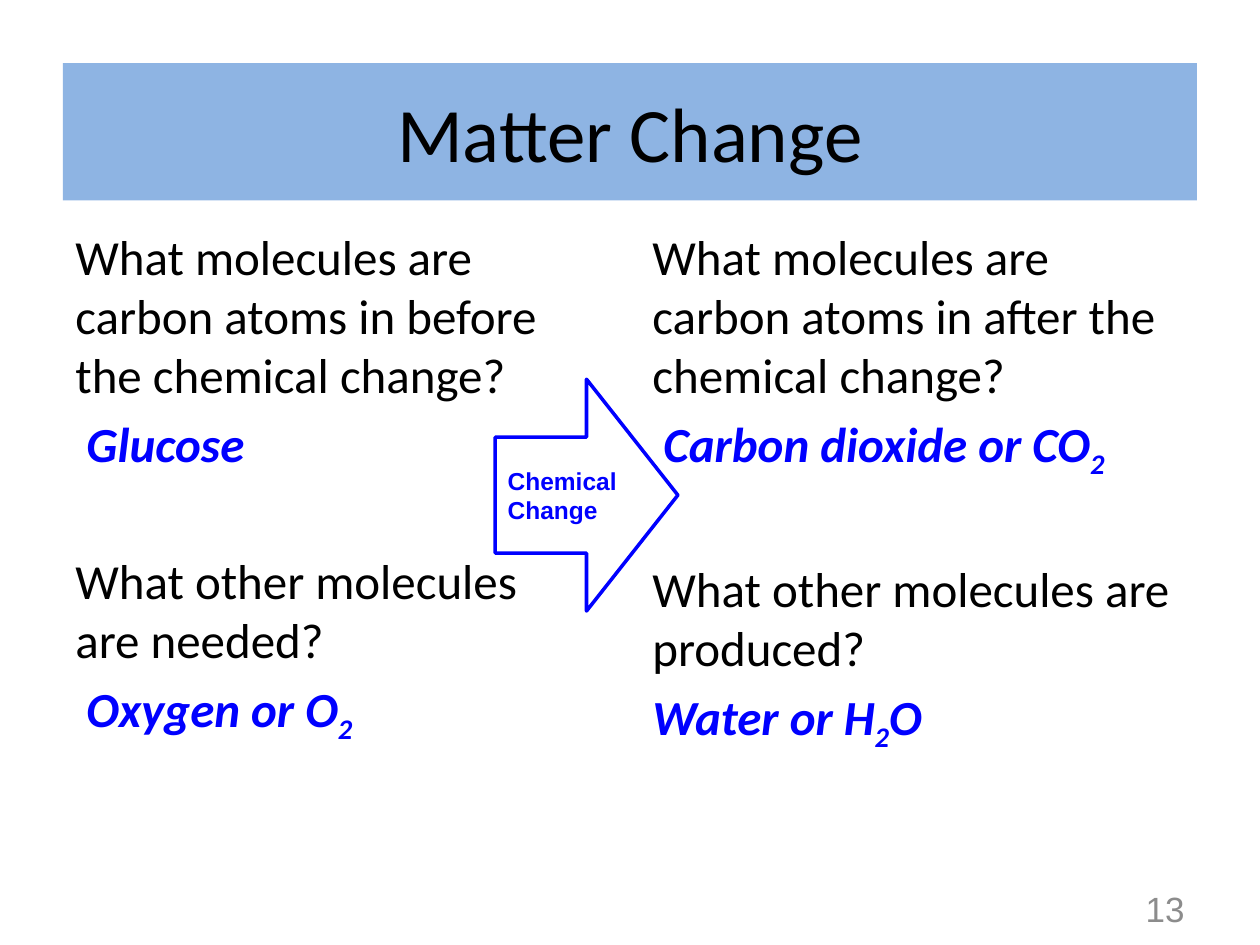
import pptx
import pptx.dml.color
import pptx.enum.shapes
import pptx.enum.text
import pptx.util
from pptx.util import Inches

ALIGN = pptx.enum.text.PP_ALIGN
ANCHOR = pptx.enum.text.MSO_ANCHOR
SHAPE = pptx.enum.shapes.MSO_SHAPE
BLACK, BLUE, GREY = "000000", "0000FF", "8C8C8C"


def color(hex_string):
    return pptx.dml.color.RGBColor.from_string(hex_string)


class Deck:
    body_size = 28
    line_gap = 5.6    # a fifth of the body size
    group_gap = 45    # before the second question

    def __init__(self, prs):
        self.s = prs.slides.add_slide(prs.slide_layouts[6])

    def style(self, p, size, font, hex_string, bold=False, italic=False):
        f = p.font
        f.size, f.name = pptx.util.Pt(size), font
        f.bold, f.italic = bold, italic
        f.color.rgb = color(hex_string)

    def frame(self, sp, anchor):
        tf = sp.text_frame
        tf.word_wrap = True
        tf.vertical_anchor = anchor
        return tf

    def label(self, sp, text, size, font, hex_string, align, bold=False):
        p = self.frame(sp, ANCHOR.MIDDLE).paragraphs[0]
        p.text, p.alignment = text, align
        self.style(p, size, font, hex_string, bold)

    def shape(self, kind, box, fill, line=None):
        sp = self.s.shapes.add_shape(kind, *map(Inches, box))
        sp.shadow.inherit = False
        sp.fill.solid()
        sp.fill.fore_color.rgb = color(fill)
        if line:
            sp.line.color.rgb = color(line)
            sp.line.width = pptx.util.Pt(2)
        else:
            sp.line.fill.background()
        return sp

    def textbox(self, box):
        return self.s.shapes.add_textbox(*map(Inches, box))

    def answer(self, p, text):
        """Digits in a formula are set as subscripts."""
        stem, digit, tail = text.partition("2")
        for part in filter(None, (stem, digit, tail)):
            r = p.add_run()
            r.text = part
            if part == "2":
                r.font._element.set("baseline", "-25000")

    def column(self, left, pairs):
        tf = self.frame(self.textbox((left, 1.75, 4.42, 4.95)), ANCHOR.TOP)
        for i, (question, reply) in enumerate(pairs):
            p = tf.add_paragraph() if i else tf.paragraphs[0]
            p.text = question
            p.space_before = pptx.util.Pt(self.group_gap if i else self.line_gap)
            self.style(p, self.body_size, "Calibri", BLACK)
            p = tf.add_paragraph()
            p.space_before = pptx.util.Pt(self.line_gap)
            self.answer(p, reply)
            self.style(p, self.body_size, "Calibri", BLUE, True, True)


def main():
    prs = pptx.Presentation()
    prs.slide_width, prs.slide_height = Inches(10), Inches(7.5)
    deck = Deck(prs)

    # Title band
    band = deck.shape(SHAPE.RECTANGLE, (0.5, 0.5, 9, 1.09), "8EB4E3")
    deck.label(band, "Matter Change", 44, "Calibri", BLACK, ALIGN.CENTER)

    # Before and after columns
    deck.column(0.5, [
        ("What molecules are carbon atoms in before the chemical change?", " Glucose"),
        ("What other molecules \vare needed?", " Oxygen or O2"),
    ])
    deck.column(5.08, [
        ("What molecules are carbon atoms in after the chemical change?",
         " Carbon dioxide or CO2"),
        ("What other molecules are produced?", "Water or H2O"),
    ])

    # Slide number
    number = deck.textbox((7.17, 7.01, 2.33, 0.4))
    deck.label(number, "13", 20, "Arial", GREY, ALIGN.RIGHT)

    # Arrow between the columns
    arrow = deck.shape(SHAPE.RIGHT_ARROW, (3.93, 3.01, 1.45, 1.84), "FFFFFF", BLUE)
    deck.label(arrow, "Chemical Change", 14, "Arial", BLUE, ALIGN.LEFT, bold=True)

    prs.save("out.pptx")


if __name__ == "__main__":
    main()
